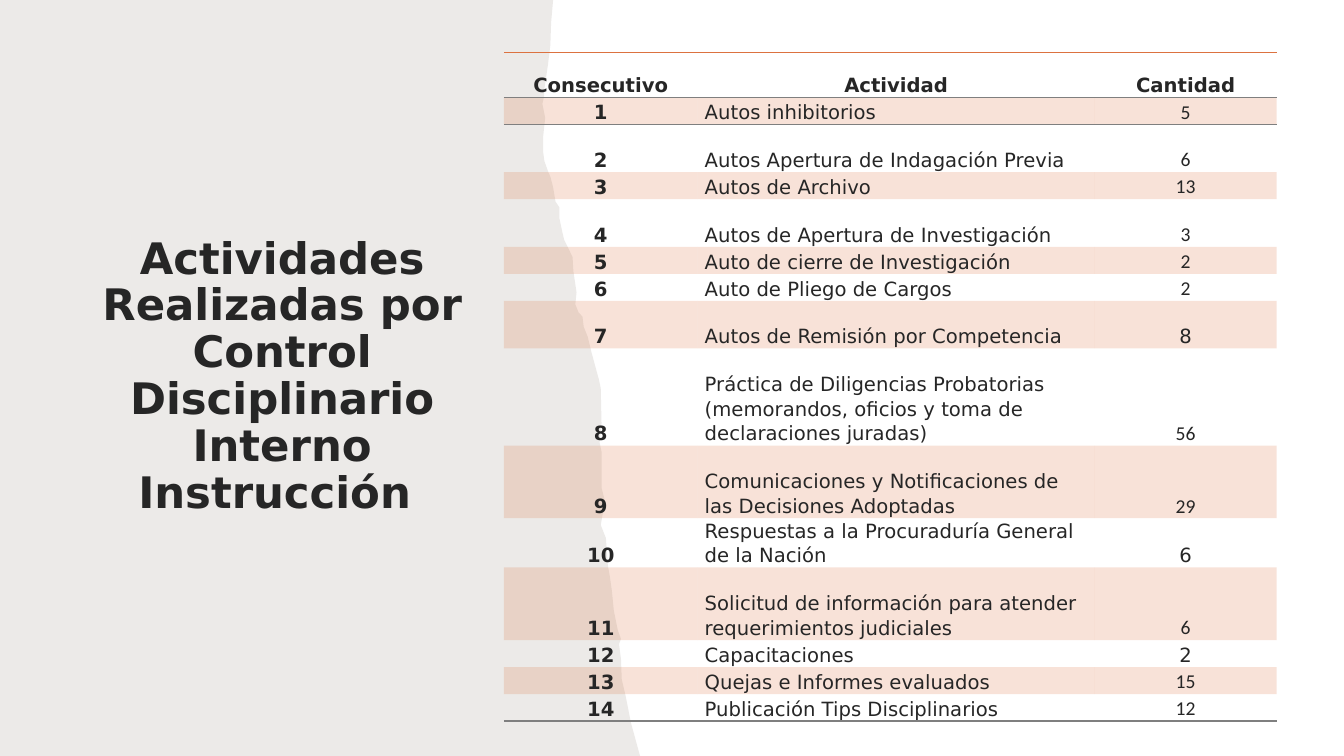
from lxml.etree import SubElement
from pptx import Presentation
from pptx.dml.color import RGBColor
from pptx.enum.text import MSO_ANCHOR, MSO_AUTO_SIZE, PP_ALIGN
from pptx.oxml.ns import qn
from pptx.util import Cm, Pt

ACCENT = "DC7240"
RULE_GRAY = "7F7F7F"
NO_STYLE = "{2D5ABB26-0587-4C30-8999-92F81FD0307C}"


def paint(fill, color, opacity=100):
    fill.solid()
    fill.fore_color.rgb = RGBColor.from_string(color)
    if opacity < 100:
        tint = fill._xPr.find(qn("a:solidFill"))[0]
        SubElement(tint, qn("a:alpha"), val=str(opacity * 1000))


def write(frame, text, size=14, font="DejaVu Sans", bold=False,
          align=PP_ALIGN.CENTER, spacing=1.07):
    paragraph = frame.paragraphs[0]
    paragraph.alignment = align
    paragraph.line_spacing = spacing
    paragraph.space_before = Pt(0)
    run = paragraph.add_run()
    run.text = text
    run.font.size = Pt(size)
    run.font.name = font
    run.font.bold = bold
    run.font.color.rgb = RGBColor.from_string("262626")


presentation = Presentation()
presentation.slide_width, presentation.slide_height = Cm(33.87), Cm(19.05)
slide = presentation.slides.add_slide(presentation.slide_layouts[5])

torn_edge = [
    (1394, 0), (1389, 56), (1387, 114), (1381, 163), (1372, 224), (1371, 244),
    (1367, 262), (1374, 297), (1369, 343), (1369, 384), (1372, 406), (1382, 434),
    (1387, 445), (1394, 472), (1400, 508), (1410, 523), (1410, 551), (1417, 584),
    (1422, 605), (1433, 627), (1443, 648), (1445, 683), (1453, 737), (1450, 767),
    (1458, 787), (1468, 798), (1471, 823), (1481, 848), (1491, 889), (1504, 937),
    (1509, 955), (1514, 978), (1516, 1067), (1511, 1115), (1516, 1138),
    (1516, 1229), (1524, 1260), (1519, 1295), (1514, 1323), (1527, 1356),
    (1532, 1425), (1537, 1453), (1542, 1488), (1547, 1539), (1557, 1588),
    (1565, 1610), (1560, 1623), (1565, 1661), (1567, 1712), (1577, 1755),
    (1590, 1821), (1613, 1905),
]
outline = slide.shapes.build_freeform(0, 0, scale=Cm(0.01))
outline.add_line_segments(torn_edge + [(0, 1905)], close=True)
paper = outline.convert_to_shape()
paper.shadow.inherit = False
paper.line.fill.background()
paint(paper.fill, "82766A", opacity=15)
slide.shapes._spTree.insert(2, paper._element)

heading = slide.shapes.title
heading.left, heading.top, heading.width, heading.height = Cm(2.08), Cm(5.41), Cm(10.06), Cm(7.77)
heading.text_frame.word_wrap = True
heading.text_frame.auto_size = MSO_AUTO_SIZE.NONE
heading.text_frame.vertical_anchor = MSO_ANCHOR.BOTTOM
write(heading.text_frame,
      "Actividades Realizadas por Control Disciplinario Interno Instrucción ",
      size=31, bold=True, spacing=0.9)

activities = [
    ("Autos inhibitorios", 5, 0.68),
    ("Autos Apertura de Indagación Previa", 6, 1.2),
    ("Autos de Archivo", 13, 0.68),
    ("Autos de Apertura de Investigación", 3, 1.2),
    ("Auto de cierre de Investigación", 2, 0.68),
    ("Auto de Pliego de Cargos", 2, 0.68),
    ("Autos de Remisión por Competencia", 8, 1.2),
    ("Práctica de Diligencias Probatorias (memorandos, oficios y toma de declaraciones juradas)", 56, 2.45),
    ("Comunicaciones y Notificaciones de las Decisiones Adoptadas", 29, 1.83),
    ("Respuestas a la Procuraduría General de la Nación", 6, 1.2),
    ("Solicitud de información para atender requerimientos judiciales", 6, 1.83),
    ("Capacitaciones", 2, 0.68),
    ("Quejas e Informes evaluados", 15, 0.68),
    ("Publicación Tips Disciplinarios", 12, 0.68),
]
wide_font_counts = {7, 10, 12}
last = len(activities)
rows = [("Consecutivo", "Actividad", "Cantidad", 1.14)]
rows += [(str(number), activity, str(count), height)
         for number, (activity, count, height) in enumerate(activities, 1)]

table = slide.shapes.add_table(len(rows), 3, Cm(12.7), Cm(1.32), Cm(19.47), Cm(16.81)).table
table._tbl.tblPr.find(qn("a:tableStyleId")).text = NO_STYLE
for column, width in zip(table.columns, (4.88, 10.01, 4.58)):
    column.width = Cm(width)

for number, (*values, height) in enumerate(rows):
    table.rows[number].height = Cm(height)
    borders = {0: [("a:lnT", ACCENT), ("a:lnB", RULE_GRAY)],
               1: [("a:lnT", RULE_GRAY)],
               last: [("a:lnB", RULE_GRAY)]}.get(number, [])
    for position, value in enumerate(values):
        cell = table.cell(number, position)
        cell.margin_left = cell.margin_right = Cm(0.18)
        cell.margin_top = cell.margin_bottom = 0
        cell.vertical_anchor = MSO_ANCHOR.BOTTOM
        narrow = number > 0 and position == 2 and number not in wide_font_counts
        write(cell.text_frame, value,
              font="Calibri" if narrow else "DejaVu Sans",
              bold=number == 0 or position == 0,
              align=PP_ALIGN.LEFT if number and position == 1 else PP_ALIGN.CENTER)
        properties = cell._tc.get_or_add_tcPr()
        for side, color in borders:
            border = SubElement(properties, qn(side), w=str(Pt(1)))
            SubElement(SubElement(border, qn("a:solidFill")), qn("a:srgbClr"), val=color)
        if number % 2:
            paint(cell.fill, ACCENT, opacity=20)
        else:
            cell.fill.background()

presentation.save("out.pptx")
